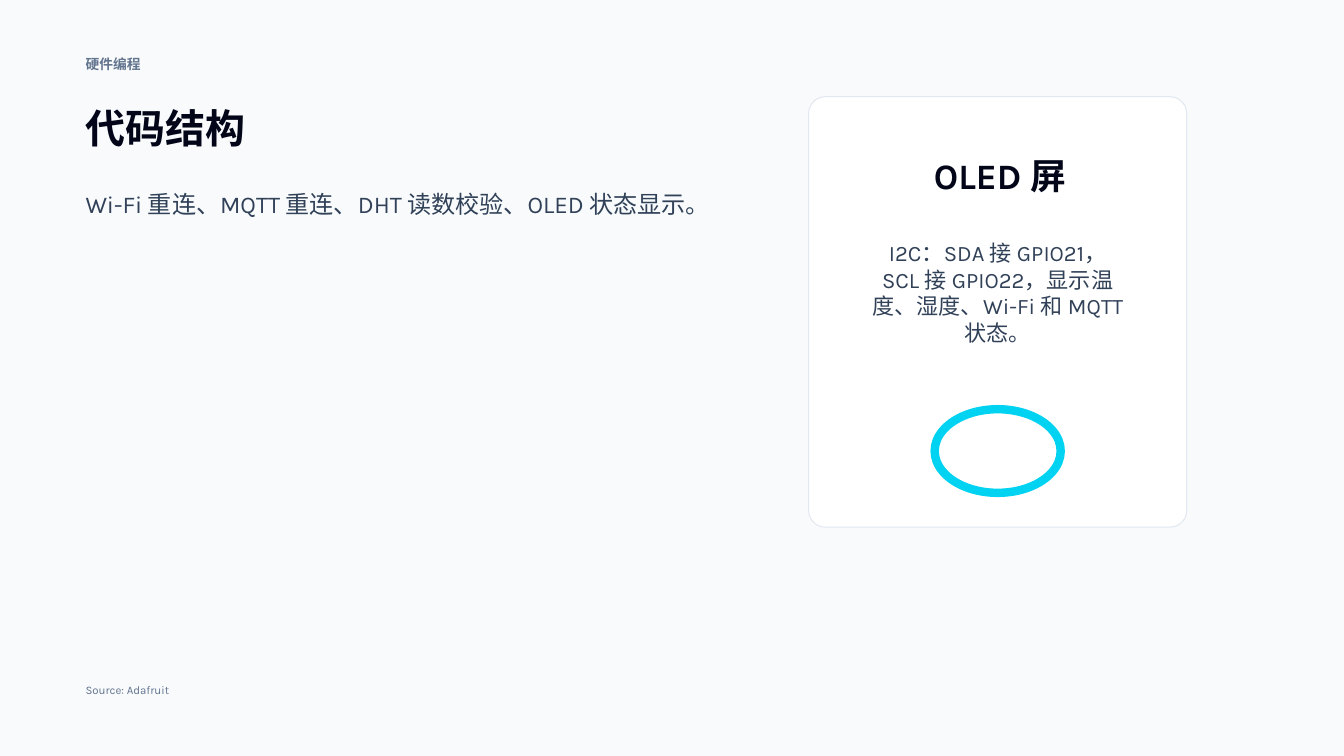
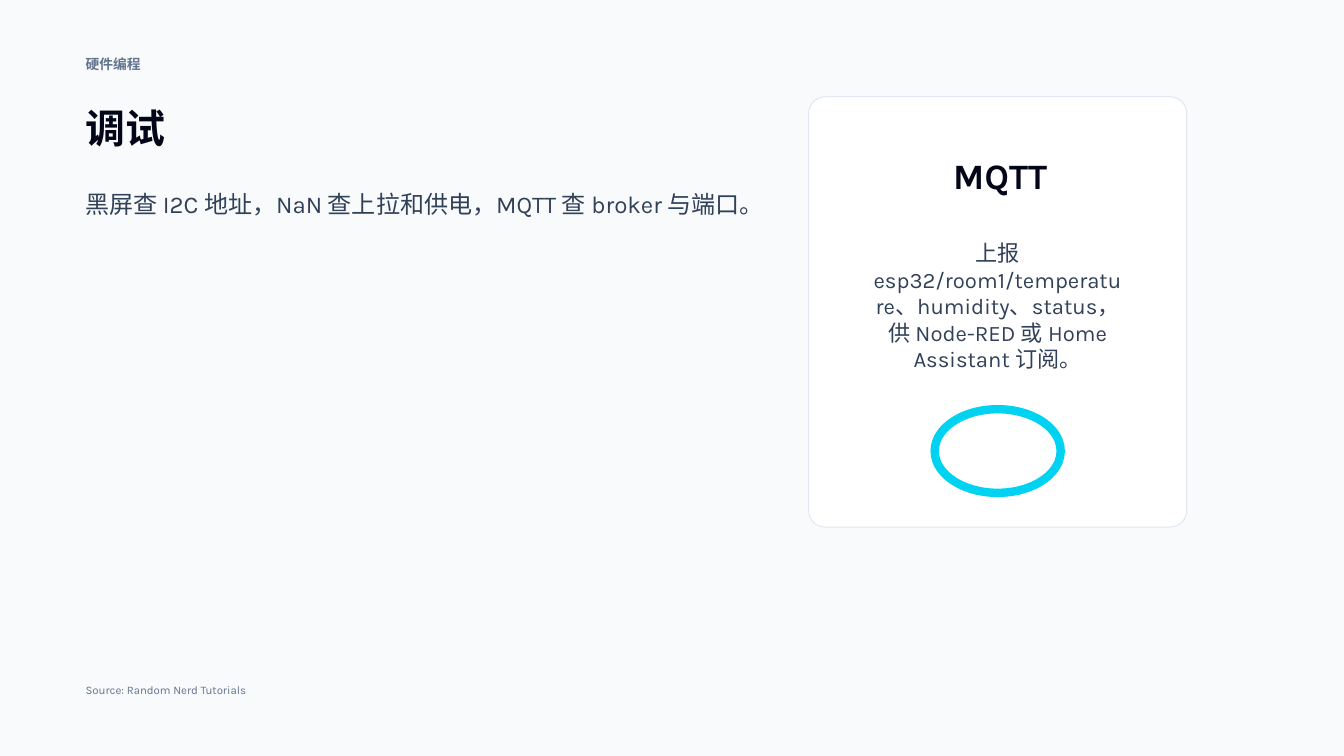
from pptx import Presentation
from pptx.dml.color import RGBColor
from pptx.enum.shapes import MSO_SHAPE
from pptx.enum.text import MSO_ANCHOR, MSO_AUTO_SIZE, PP_ALIGN
from pptx.util import Inches, Pt

ROUNDED, ELLIPSE = MSO_SHAPE.ROUNDED_RECTANGLE, MSO_SHAPE.OVAL
LEFT, CENTER = PP_ALIGN.LEFT, PP_ALIGN.CENTER
TOP = MSO_ANCHOR.TOP
NO_AUTOFIT = MSO_AUTO_SIZE.NONE

FONT = "Karla"
PAGE, INK, BODY, MUTED = "F8FAFC", "020618", "314158", "62748E"
WHITE, BORDER, ACCENT = "FFFFFF", "E2E8F0", "00D3F2"
TITLE_ONLY = 5
MARGIN = 0.75
SECTION = "硬件编程"

SLIDES = [
    {
        "title": "代码结构",
        "summary": "Wi-Fi 重连、MQTT 重连、DHT 读数校验、OLED 状态显示。",
        "card_title": "OLED 屏",
        "card_text": "I2C：SDA 接 GPIO21，SCL 接 GPIO22，显示温度、湿度、Wi-Fi 和 MQTT 状态。",
        "source": "Source: Adafruit",
    },
    {
        "title": "调试",
        "summary": "黑屏查 I2C 地址，NaN 查上拉和供电，MQTT 查 broker 与端口。",
        "card_title": "MQTT",
        "card_text": "上报 esp32/room1/temperature、humidity、status，供 Node-RED 或 Home Assistant 订阅。",
        "source": "Source: Random Nerd Tutorials",
    },
]


def rgb(value):
    """Turn a hex string into a colour."""
    return RGBColor.from_string(value)


def write(holder, text, size, color, bold=False, align=LEFT):
    """Fill a text holder with one styled paragraph."""
    frame = holder.text_frame
    frame.text = text
    frame.word_wrap = True
    frame.auto_size = NO_AUTOFIT
    frame.vertical_anchor = TOP
    paragraph = frame.paragraphs[0]
    paragraph.alignment = align
    font = paragraph.runs[0].font
    font.name, font.size, font.bold = FONT, Pt(size), bold
    font.color.rgb = rgb(color)


def add_title(slide, text):
    """Place and style the title placeholder."""
    title = slide.shapes.title
    title.left, title.top = Inches(MARGIN), Inches(0.98)
    title.width, title.height = Inches(7.29), Inches(0.67)
    write(title, text, 28.5, INK, bold=True)


def add_text(slide, box, text, size, color, **style):
    """Add a text box at left, top, width, height in inches."""
    holder = slide.shapes.add_textbox(*map(Inches, box))
    write(holder, text, size, color, **style)


def add_outlined(slide, kind, box, line, weight, fill=None):
    """Add an outlined shape, hollow unless a fill is given."""
    shape = slide.shapes.add_shape(kind, *map(Inches, box))
    shape.shadow.inherit = False
    if fill:
        shape.fill.solid()
        shape.fill.fore_color.rgb = rgb(fill)
    else:
        shape.fill.background()
    shape.line.color.rgb = rgb(line)
    shape.line.width = Pt(weight)
    return shape


def add_card(slide, title, text):
    """Add the white card with heading, text and accent ring."""
    panel = add_outlined(slide, ROUNDED, (8.02, 0.96, 3.75, 4.27), BORDER, 0.75, WHITE)
    panel.adjustments[0] = 0.044
    add_text(slide, (8.46, 1.48, 2.92, 0.46), title, 25.5, INK, bold=True, align=CENTER)
    add_text(slide, (8.54, 2.33, 2.71, 1.67), text, 15.8, BODY, align=CENTER)
    add_outlined(slide, ELLIPSE, (9.27, 4.06, 1.25, 0.83), ACCENT, 6)


def add_content_slide(prs, content):
    """Build one slide from its content."""
    slide = prs.slides.add_slide(prs.slide_layouts[TITLE_ONLY])
    add_text(slide, (MARGIN, 0.5, 3.75, 0.31), SECTION, 9.8, MUTED, bold=True)
    add_title(slide, content["title"])
    add_text(slide, (MARGIN, 1.83, 6.77, 1.33), content["summary"], 17.2, BODY)
    add_card(slide, content["card_title"], content["card_text"])
    add_text(slide, (MARGIN, 6.73, 7.92, 0.25), content["source"], 8.2, MUTED)


def main():
    """Build and save the presentation."""
    prs = Presentation()
    prs.slide_width, prs.slide_height = Inches(13.33), Inches(7.5)
    background = prs.slide_master.background.fill
    background.solid()
    background.fore_color.rgb = rgb(PAGE)
    for content in SLIDES:
        add_content_slide(prs, content)
    prs.save("out.pptx")


if __name__ == "__main__":
    main()
